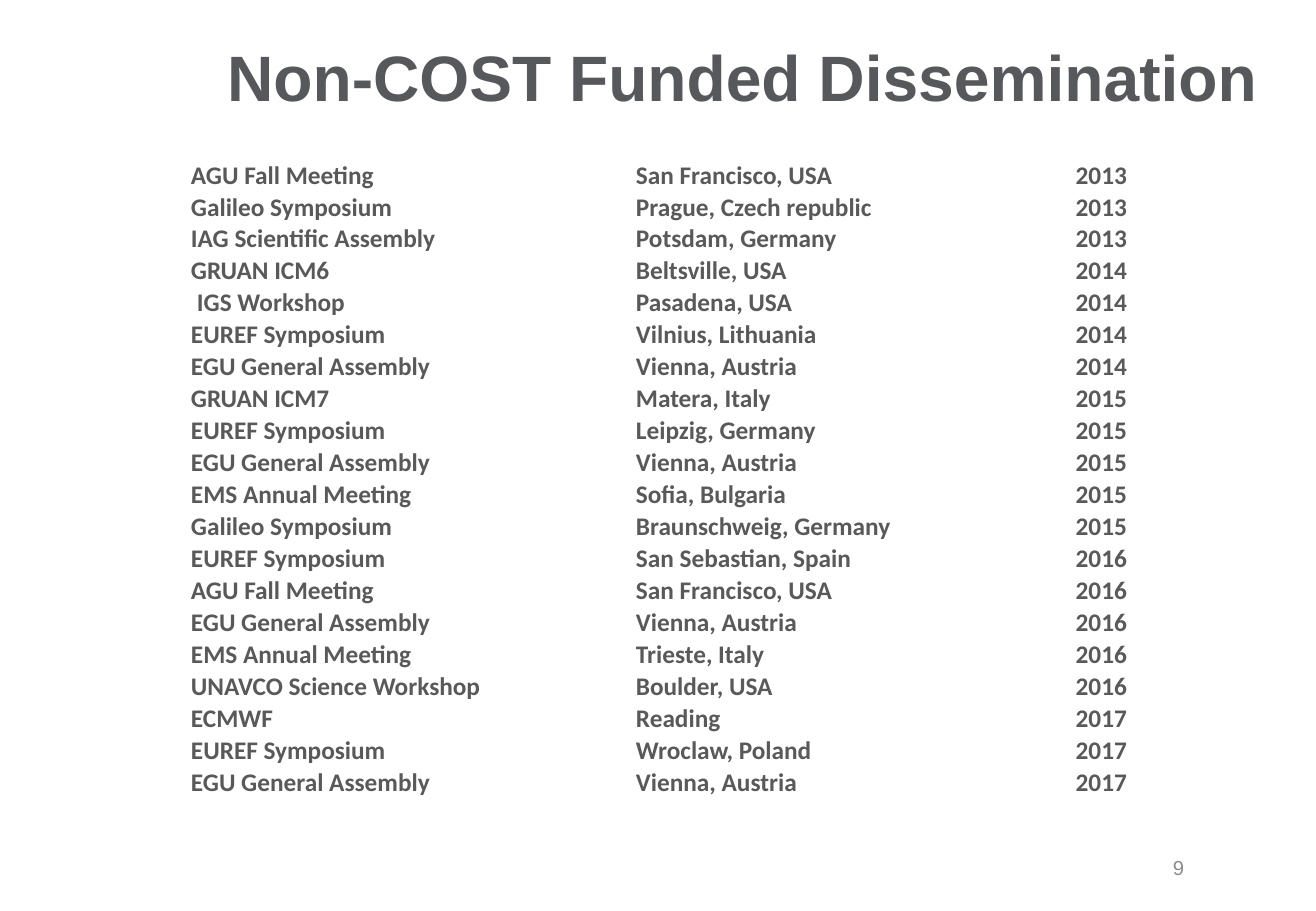
from pptx import Presentation
from pptx.dml.color import RGBColor as Color
from pptx.enum.text import MSO_ANCHOR as Anchor, MSO_AUTO_SIZE as AutoSize, PP_ALIGN as Align
from pptx.util import Pt

EMU_PER_PX = 914400 / 121.5
COLORS = {"title": "56585B", "table": "595959", "number": "8C8C8C"}

EVENTS = [
    ("AGU Fall Meeting", "San Francisco, USA", 2013),
    ("Galileo Symposium", "Prague, Czech republic", 2013),
    ("IAG Scientific Assembly", "Potsdam, Germany", 2013),
    ("GRUAN ICM6", "Beltsville, USA", 2014),
    ("IGS Workshop", "Pasadena, USA", 2014),
    ("EUREF Symposium", "Vilnius, Lithuania", 2014),
    ("EGU General Assembly", "Vienna, Austria", 2014),
    ("GRUAN ICM7", "Matera, Italy", 2015),
    ("EUREF Symposium", "Leipzig, Germany", 2015),
    ("EGU General Assembly", "Vienna, Austria", 2015),
    ("EMS Annual Meeting", "Sofia, Bulgaria", 2015),
    ("Galileo Symposium", "Braunschweig, Germany", 2015),
    ("EUREF Symposium", "San Sebastian, Spain", 2016),
    ("AGU Fall Meeting", "San Francisco, USA", 2016),
    ("EGU General Assembly", "Vienna, Austria", 2016),
    ("EMS Annual Meeting", "Trieste, Italy", 2016),
    ("UNAVCO Science Workshop", "Boulder, USA", 2016),
    ("ECMWF", "Reading", 2017),
    ("EUREF Symposium", "Wroclaw, Poland", 2017),
    ("EGU General Assembly", "Vienna, Austria", 2017),
]
INDENTED_EVENT = "IGS Workshop"


def px(length):
    return round(length * EMU_PER_PX)


class SlideBuilder:
    def __init__(self, page, heading_font="Arial", table_font="Calibri"):
        self.page = page
        self.heading_font = heading_font
        self.table_font = table_font

    def add_text(self, frame, text, size, font, color, bold=False, align=Align.LEFT):
        para = frame.paragraphs[0]
        para.alignment = align
        span = para.add_run()
        span.text = text
        span.font.size = Pt(size)
        span.font.name = font
        span.font.bold = bold
        span.font.color.rgb = Color.from_string(COLORS[color])

    def title(self, text, left, top, width, height):
        box = self.page.shapes.title
        box.left, box.top, box.width, box.height = map(px, (left, top, width, height))
        frame = box.text_frame
        frame.auto_size = AutoSize.NONE
        frame.vertical_anchor = Anchor.TOP
        frame.margin_top = px(13)
        self.add_text(frame, text, 38, self.heading_font, "title", bold=True)

    def number(self, text, left, top, width, height):
        box = self.page.shapes.add_textbox(*map(px, (left, top, width, height)))
        frame = box.text_frame
        frame.word_wrap = True
        frame.vertical_anchor = Anchor.MIDDLE
        self.add_text(frame, text, 12, self.heading_font, "number", align=Align.RIGHT)

    def table(self, rows, left, top, widths, row_height):
        size = (sum(widths), row_height * len(rows))
        table = self.page.shapes.add_table(
            len(rows), len(widths), *map(px, (left, top, *size))).table
        table.first_row = table.horz_banding = False
        for column, width in zip(table.columns, widths):
            column.width = px(width)
        for row, values in zip(table.rows, rows):
            row.height = px(row_height)
            for cell, value in zip(row.cells, values):
                self.cell(cell, value)

    def cell(self, cell, value):
        cell.fill.background()
        cell.vertical_anchor = Anchor.BOTTOM
        cell.margin_left = px(7 if value == INDENTED_EVENT else 1)
        cell.margin_right = cell.margin_top = px(1)
        cell.margin_bottom = 0
        align = Align.RIGHT if isinstance(value, int) else Align.LEFT
        self.add_text(cell.text_frame, str(value), 15, self.table_font, "table",
                      bold=True, align=align)


def main():
    deck = Presentation()
    deck.slide_width, deck.slide_height = px(1316), px(911)
    builder = SlideBuilder(deck.slides.add_slide(deck.slide_layouts[5]))

    # Page number and heading
    builder.number("9", 1113, 843, 83, 49)
    builder.title("Non-COST Funded Dissemination", 215, 24, 1055, 113)

    # Events with place and year
    builder.table(EVENTS, 190, 159, widths=(445, 317, 176), row_height=32)

    deck.save("out.pptx")


if __name__ == "__main__":
    main()
